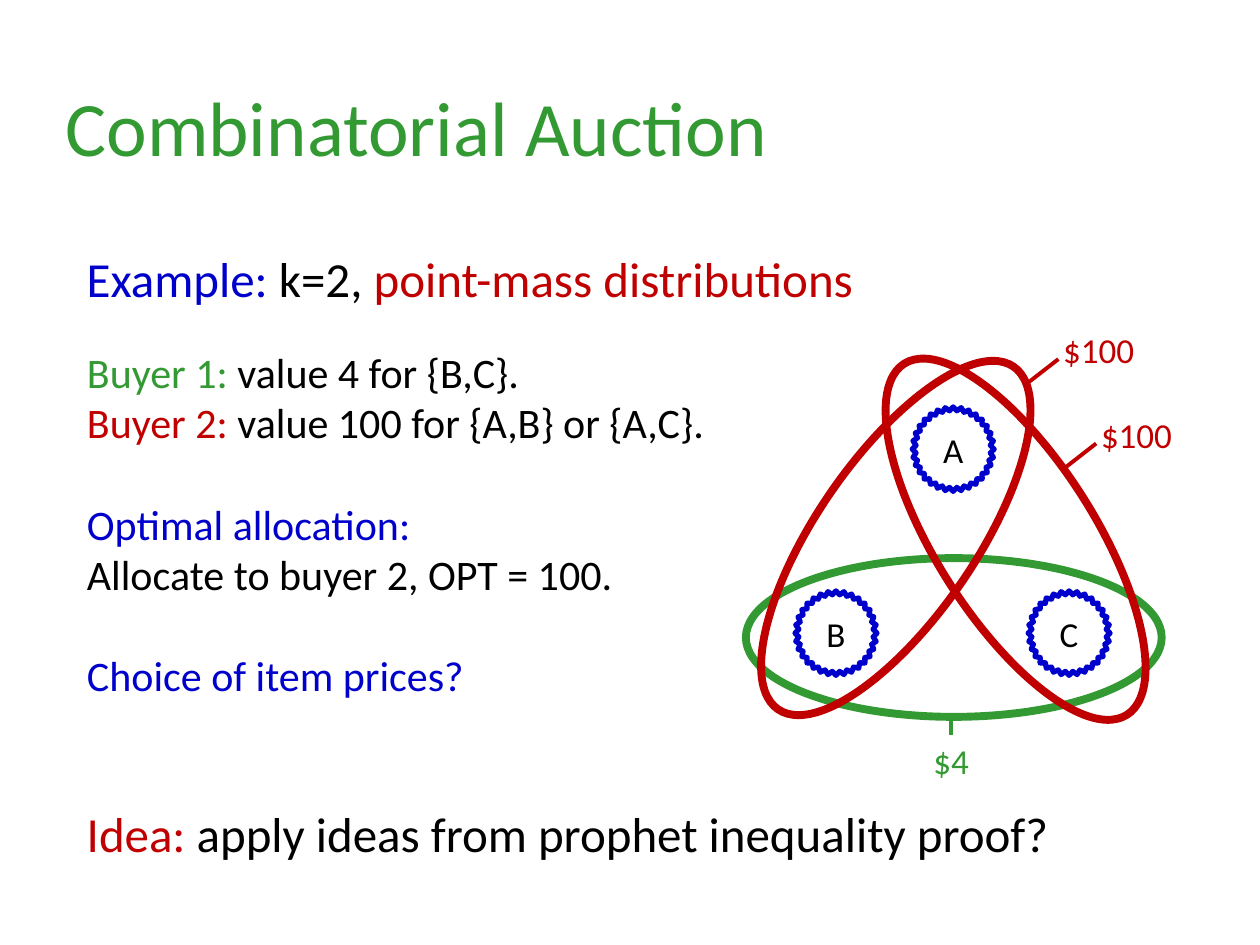
from lxml.etree import SubElement
from pptx import Presentation
from pptx.dml.color import RGBColor
from pptx.enum.shapes import MSO_CONNECTOR, MSO_SHAPE
from pptx.enum.text import MSO_ANCHOR, MSO_AUTO_SIZE, PP_ALIGN
from pptx.oxml.ns import qn
from pptx.util import Inches, Pt

COLORS = {
    "green": "339933",
    "red": "C00000",
    "blue": "0000CC",
    "black": "000000",
    "white": "FFFFFF",
}
FONT = "Calibri"


def rgb(name):
    return RGBColor.from_string(COLORS[name])


class SlideBuilder:
    def __init__(self, slide):
        self.slide = slide

    def place(self, sp, left, top, width, height):
        sp.left, sp.top = Inches(left), Inches(top)
        sp.width, sp.height = Inches(width), Inches(height)

    def add_runs(self, p, runs, size):
        for text, color in runs:
            r = p.add_run()
            r.text = text
            r.font.name = FONT
            r.font.size = Pt(size)
            r.font.color.rgb = rgb(color)

    def title(self, text, color, *box):
        sp = self.slide.shapes.title
        self.place(sp, *box)
        tf = sp.text_frame
        tf.auto_size = MSO_AUTO_SIZE.NONE
        tf.word_wrap = False
        p = tf.paragraphs[0]
        p.alignment = PP_ALIGN.LEFT
        self.add_runs(p, [(text, color)], 44)

    def body(self, groups, gap, *box):
        sp = self.slide.placeholders[1]
        self.place(sp, *box)
        tf = sp.text_frame
        tf.auto_size = MSO_AUTO_SIZE.NONE
        p = tf.paragraphs[0]
        for i, group in enumerate(groups):
            for j, runs in enumerate(group):
                if i or j:
                    p = tf.add_paragraph()
                p.space_before = Pt(gap if i and j == 0 else 0)
                pPr = p._p.get_or_add_pPr()
                pPr.set("marL", "0")
                pPr.set("indent", "0")
                SubElement(pPr, qn("a:buNone"))
                self.add_runs(p, runs, 24)

    def text(self, runs, size, left, top, width, height):
        sp = self.slide.shapes.add_textbox(
            Inches(left), Inches(top), Inches(width), Inches(height))
        tf = sp.text_frame
        tf.word_wrap = True
        self.add_runs(tf.paragraphs[0], runs, size)

    def shape(self, kind, color, weight, left, top, width, height, fill=None):
        sp = self.slide.shapes.add_shape(
            kind, Inches(left), Inches(top), Inches(width), Inches(height))
        sp.shadow.inherit = False
        if fill:
            sp.fill.solid()
            sp.fill.fore_color.rgb = rgb(fill)
        else:
            sp.fill.background()
        sp.line.color.rgb = rgb(color)
        sp.line.width = Pt(weight)
        return sp

    def item(self, name, left, top, fill=None):
        sp = self.shape(MSO_SHAPE.STAR_32_POINT, "blue", 3,
                        left, top, 0.65, 0.67, fill)
        sp.adjustments[0] = 0.456
        tf = sp.text_frame
        tf.word_wrap = False
        tf.vertical_anchor = MSO_ANCHOR.MIDDLE
        p = tf.paragraphs[0]
        p.alignment = PP_ALIGN.CENTER
        self.add_runs(p, [(name, "black")], 20)

    def bundle(self, color, left, top, rotation=0):
        sp = self.shape(MSO_SHAPE.OVAL, color, 4.5, left, top, 3.3, 1.26)
        sp.rotation = rotation

    def price(self, text, color, start, end, label):
        cn = self.slide.shapes.add_connector(
            MSO_CONNECTOR.STRAIGHT, *(Inches(v) for v in start + end))
        cn.line.color.rgb = rgb(color)
        cn.line.width = Pt(2.25)
        SubElement(cn._element.spPr, qn("a:effectLst"))
        self.text([(text, color)], 20, *label, 0.83, 0.44)


def main():
    prs = Presentation()
    prs.slide_width, prs.slide_height = Inches(10), Inches(7.5)
    s = SlideBuilder(prs.slides.add_slide(prs.slide_layouts[1]))

    s.title("Combinatorial Auction", "green", 0.42, 0.58, 5.84, 0.84)
    s.text([("Idea: ", "red"),
            ("apply ideas from prophet inequality proof?", "black")],
           28, 0.59, 6.33, 8.8, 0.57)
    s.body([
        [[("Buyer 1:", "green"), (" value 4 for {B,C}.", "black")],
         [("Buyer 2:", "red"), (" value 100 for {A,B} or {A,C}.", "black")]],
        [[("Optimal allocation:", "blue")],
         [("Allocate to buyer 2, OPT = 100.", "black")]],
        [[("Choice of item prices?", "blue")]],
    ], 29, 0.59, 2.7, 5.18, 2.93)

    s.item("A", 7.24, 3.23, "white")
    s.bundle("green", 5.92, 4.43)
    s.price("$100", "red", (8.7, 3.52), (8.43, 3.73), (8.64, 3.23))
    s.price("$100", "red", (8.4, 2.85), (8.13, 3.06), (8.34, 2.56))
    s.price("$4", "green", (7.55, 5.68), (7.55, 5.83), (7.31, 5.82))
    s.item("B", 6.31, 4.69)
    s.item("C", 8.16, 4.69)
    s.bundle("red", 6.41, 3.65, 57.6)
    s.bundle("red", 5.46, 3.64, 304.5)

    s.text([("Example:", "blue"), (" k=2, ", "black"),
            ("point-mass distributions", "red")],
           28, 0.59, 1.92, 8.4, 0.57)
    prs.save("out.pptx")


if __name__ == "__main__":
    main()
